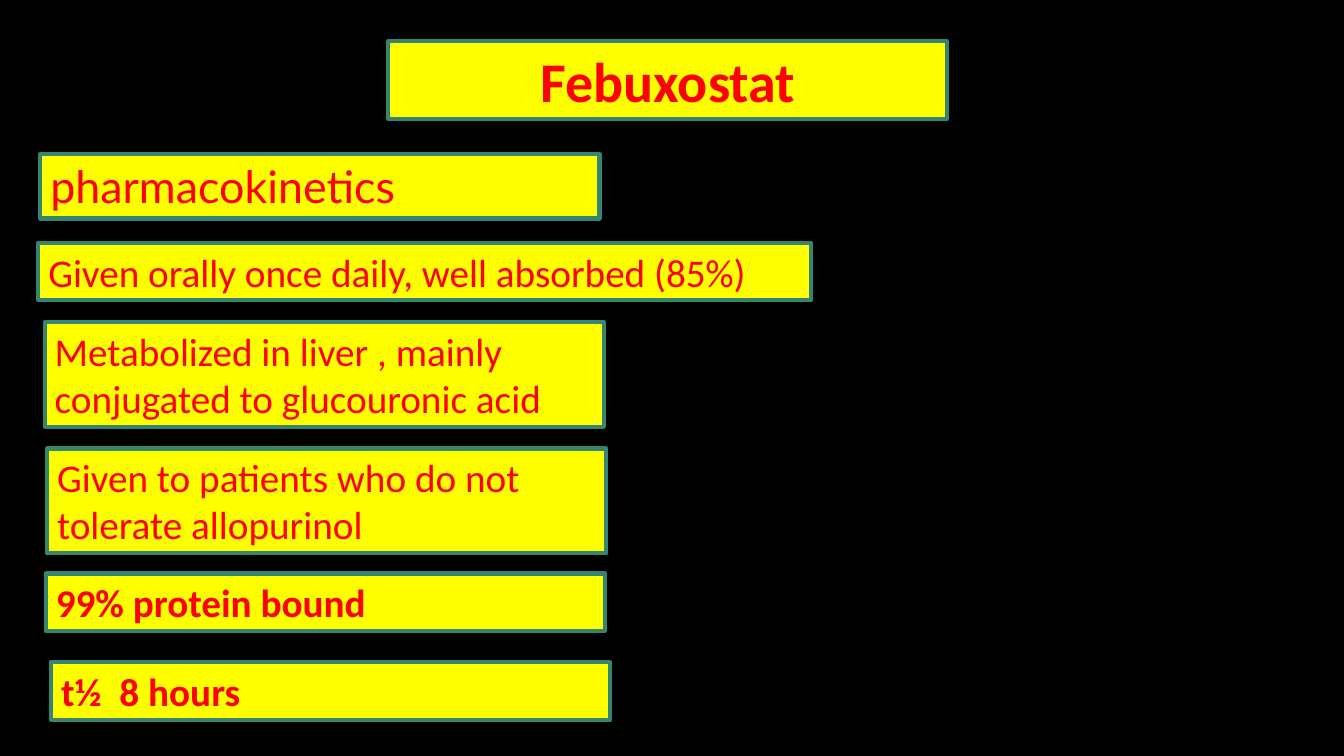
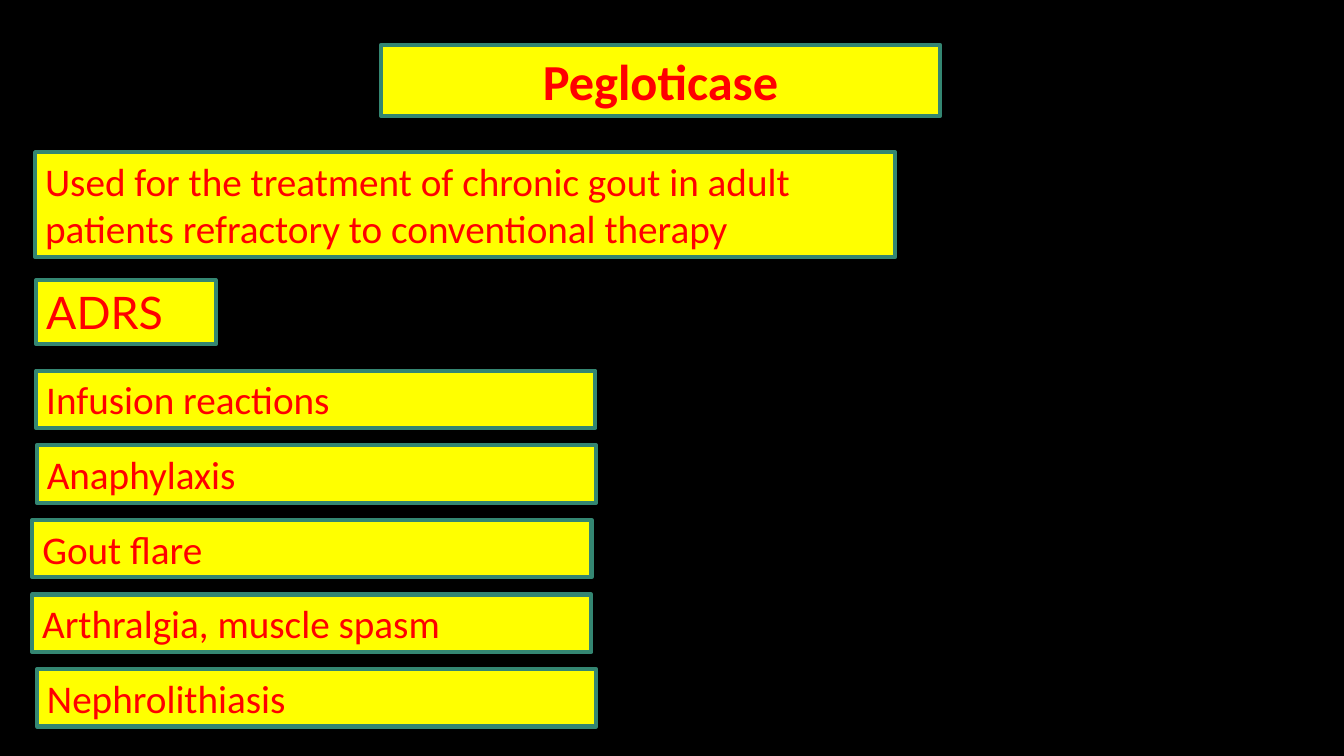
import dataclasses

import pptx
import pptx.dml.color
import pptx.enum.shapes
import pptx.enum.text
import pptx.util

SLIDE_W, SLIDE_H = 13.33, 7.5
BLACK, YELLOW, RED, TEAL = "000000", "FFFF00", "FF0000", "348672"
BODY_FONT, HEADING_FONT = "Calibri", "Lato"
BODY_SIZE, HEADING_SIZE = 28, 32
BOX_W = 41.6
LINE_HEIGHT = 1.21
REACTIONS_TOP, REACTION_STEP = 49.03, 9.87
TITLE_ONLY = 5


@dataclasses.dataclass(frozen=True)
class Box:
    """A framed text; left and width are percent of slide width, top of slide height."""
    text: str
    left: float
    top: float
    width: float = BOX_W
    lines: int = 1
    size: int = BODY_SIZE
    font: str = BODY_FONT
    bold: bool = False

    @property
    def height(self) -> float:
        """Inches needed by the lines of text and the insets."""
        return 0.1 + self.lines * self.size * LINE_HEIGHT / 72


@dataclasses.dataclass(frozen=True)
class Page:
    title: Box
    boxes: list[Box]


REACTIONS = [
    ("Infusion reactions", 2.7),
    ("Anaphylaxis", 2.74),
    ("Gout flare", 2.41),
    ("Arthralgia, muscle spasm", 2.4),
    ("Nephrolithiasis", 2.76),
]

PAGES = [
    Page(
        Box("Febuxostat", 28.88, 5.47, size=40, bold=True),
        [
            Box("pharmacokinetics", 3, 20.4, size=HEADING_SIZE, font=HEADING_FONT),
            Box("Given orally once daily, well absorbed (85%)", 2.86, 32.13, width=57.5),
            Box("Metabolized in liver , mainly conjugated to glucouronic acid",
                3.33, 42.6, lines=2),
            Box("Given to patients who do not tolerate allopurinol", 3.51, 59.33, lines=2),
            Box("99% protein bound", 3.41, 75.87, bold=True),
            Box("t½  8 hours", 3.81, 87.6, bold=True),
        ],
    ),
    Page(
        Box("Pegloticase", 28.35, 5.93, size=36, bold=True),
        [
            Box("Used for the treatment of chronic gout in adult patients "
                "refractory to conventional therapy", 2.62, 20.13, width=63.98, lines=2),
            Box("ADRS", 2.7, 37.05, width=13.35, size=HEADING_SIZE, font=HEADING_FONT),
            *(Box(text, left, REACTIONS_TOP + i * REACTION_STEP)
              for i, (text, left) in enumerate(REACTIONS)),
        ],
    ),
]


def rgb(color: str) -> pptx.dml.color.RGBColor:
    return pptx.dml.color.RGBColor.from_string(color)


def frame(box: Box) -> list[pptx.util.Emu]:
    """Left, top, width and height on the slide."""
    lengths = (box.left * SLIDE_W / 100, box.top * SLIDE_H / 100,
               box.width * SLIDE_W / 100, box.height)
    return [pptx.util.Inches(length) for length in lengths]


def write(sp, text: str, *, size: int, font: str, bold: bool, align) -> None:
    tf = sp.text_frame
    tf.text = text
    tf.word_wrap = True
    tf.auto_size = pptx.enum.text.MSO_AUTO_SIZE.NONE
    tf.vertical_anchor = pptx.enum.text.MSO_ANCHOR.TOP
    p = tf.paragraphs[0]
    p.alignment = align
    r = p.runs[0]
    r.font.name = font
    r.font.size = pptx.util.Pt(size)
    r.font.bold = bold
    r.font.color.rgb = rgb(RED)


def style_box(sp, box: Box, align=pptx.enum.text.PP_ALIGN.LEFT) -> None:
    """Give a shape or title the shared yellow card with its teal outline."""
    sp.left, sp.top, sp.width, sp.height = frame(box)
    sp.fill.solid()
    sp.fill.fore_color.rgb = rgb(YELLOW)
    sp.line.color.rgb = rgb(TEAL)
    sp.line.width = pptx.util.Pt(3)
    write(sp, box.text, size=box.size, font=box.font, bold=box.bold, align=align)


def add_page(prs, page: Page) -> None:
    slide = prs.slides.add_slide(prs.slide_layouts[TITLE_ONLY])
    style_box(slide.shapes.title, page.title, pptx.enum.text.PP_ALIGN.CENTER)
    for box in page.boxes:
        sp = slide.shapes.add_shape(pptx.enum.shapes.MSO_SHAPE.RECTANGLE, *frame(box))
        sp.shadow.inherit = False
        style_box(sp, box)


def main() -> None:
    prs = pptx.Presentation()
    prs.slide_width = pptx.util.Inches(SLIDE_W)
    prs.slide_height = pptx.util.Inches(SLIDE_H)
    background = prs.slide_master.background.fill
    background.solid()
    background.fore_color.rgb = rgb(BLACK)
    for page in PAGES:
        add_page(prs, page)
    prs.save("out.pptx")


if __name__ == "__main__":
    main()
